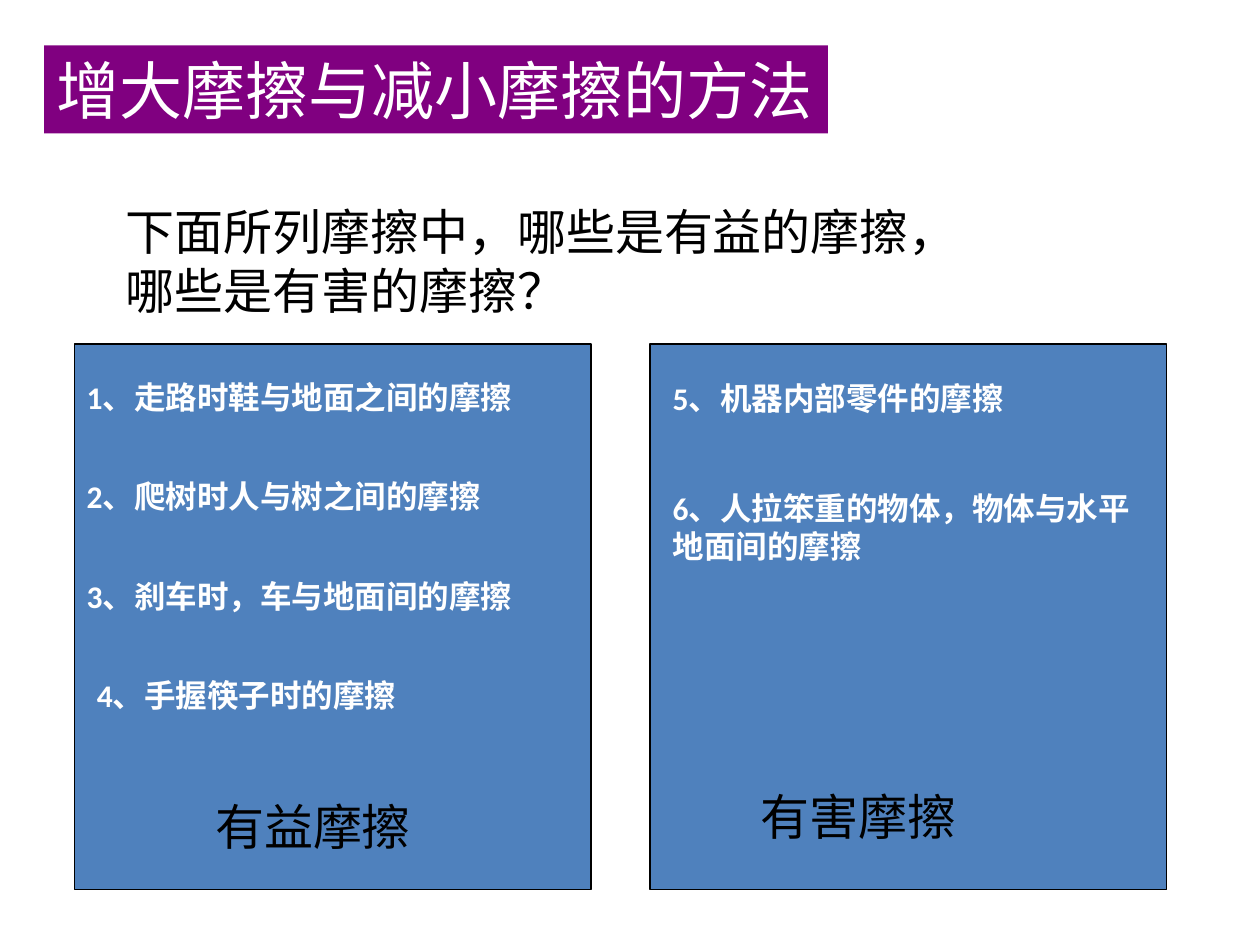
from pptx import Presentation
from pptx.dml.color import RGBColor
from pptx.enum.shapes import MSO_SHAPE as Shape
from pptx.enum.text import MSO_ANCHOR as Anchor, PP_ALIGN as Align
from pptx.util import Inches, Pt

TITLE = "增大摩擦与减小摩擦的方法"
QUESTION = "下面所列摩擦中，哪些是有益的摩擦，哪些是有害的摩擦？"

# Panel: left edge, caption (text, left, top), first item (left, top), row pitch, items
PANELS = [
    (5.16, ("有害摩擦", 5.94, 6.19), (5.24, 2.96), 0.87, [
        ("5、机器内部零件的摩擦", 0, 0.4),
        ("6、人拉笨重的物体，物体与水平地面间的摩擦", 0, 0.7),
    ]),
    (0.59, ("有益摩擦", 1.61, 6.27), (0.59, 2.95), 0.79, [
        ("1、走路时鞋与地面之间的摩擦", 0, 0.4),
        ("2、爬树时人与树之间的摩擦", 0, 0.4),
        ("3、刹车时，车与地面间的摩擦", 0, 0.4),
        ("4、手握筷子时的摩擦", 0.08, 0.4),  # slightly indented
    ]),
]
PANEL_TOP, PANEL_WIDTH, PANEL_HEIGHT = 2.73, 4.1, 4.33
ITEM_WIDTH = 3.86
BLACK, WHITE, BLUE, PURPLE = "000000", "FFFFFF", "4F81BD", "800080"


def color(value):
    return RGBColor.from_string(value)


def add_box(shapes, left, top, width, height, fill, line=None):
    shape = shapes.add_shape(Shape.RECTANGLE, *map(Inches, (left, top, width, height)))
    shape.shadow.inherit = False
    shape.fill.solid()
    shape.fill.fore_color.rgb = color(fill)
    if line:
        shape.line.color.rgb = color(line)
        shape.line.width = Pt(0.75)
    else:
        shape.line.fill.background()
    return shape


def write(shape, text, size, text_color, bold=False):
    frame = shape.text_frame
    frame.word_wrap = True
    frame.vertical_anchor = Anchor.TOP
    paragraph = frame.paragraphs[0]
    paragraph.text = text
    paragraph.alignment = Align.LEFT
    font = paragraph.font
    font.name, font.size, font.bold = "Calibri", Pt(size), bold
    font.color.rgb = color(text_color)


def add_text(shapes, left, top, width, height, *style):
    write(shapes.add_textbox(*map(Inches, (left, top, width, height))), *style)


presentation = Presentation()
presentation.slide_width, presentation.slide_height = Inches(10), Inches(7.5)
slide = presentation.slides.add_slide(presentation.slide_layouts[6])

# Panels with their captions
for left, (caption, caption_left, caption_top), *_ in PANELS:
    group = slide.shapes.add_group_shape()
    add_box(group.shapes, left, PANEL_TOP, PANEL_WIDTH, PANEL_HEIGHT, BLUE, BLACK)
    add_text(group.shapes, caption_left, caption_top, 2.44, 0.57, caption, 28, BLACK)

# Title bar and question
write(add_box(slide.shapes, 0.35, 0.36, 6.22, 0.7, PURPLE), TITLE, 36, WHITE)
add_text(slide.shapes, 0.9, 1.55, 6.69, 1.03, QUESTION, 28, BLACK)

# Items, evenly spaced down each panel
item_group = slide.shapes.add_group_shape()
for _, _, (left, top), pitch, items in PANELS:
    for row, (text, indent, height) in enumerate(items):
        add_text(item_group.shapes, left + indent, top + row * pitch,
                 ITEM_WIDTH, height, text, 18, WHITE, True)

presentation.save("out.pptx")
